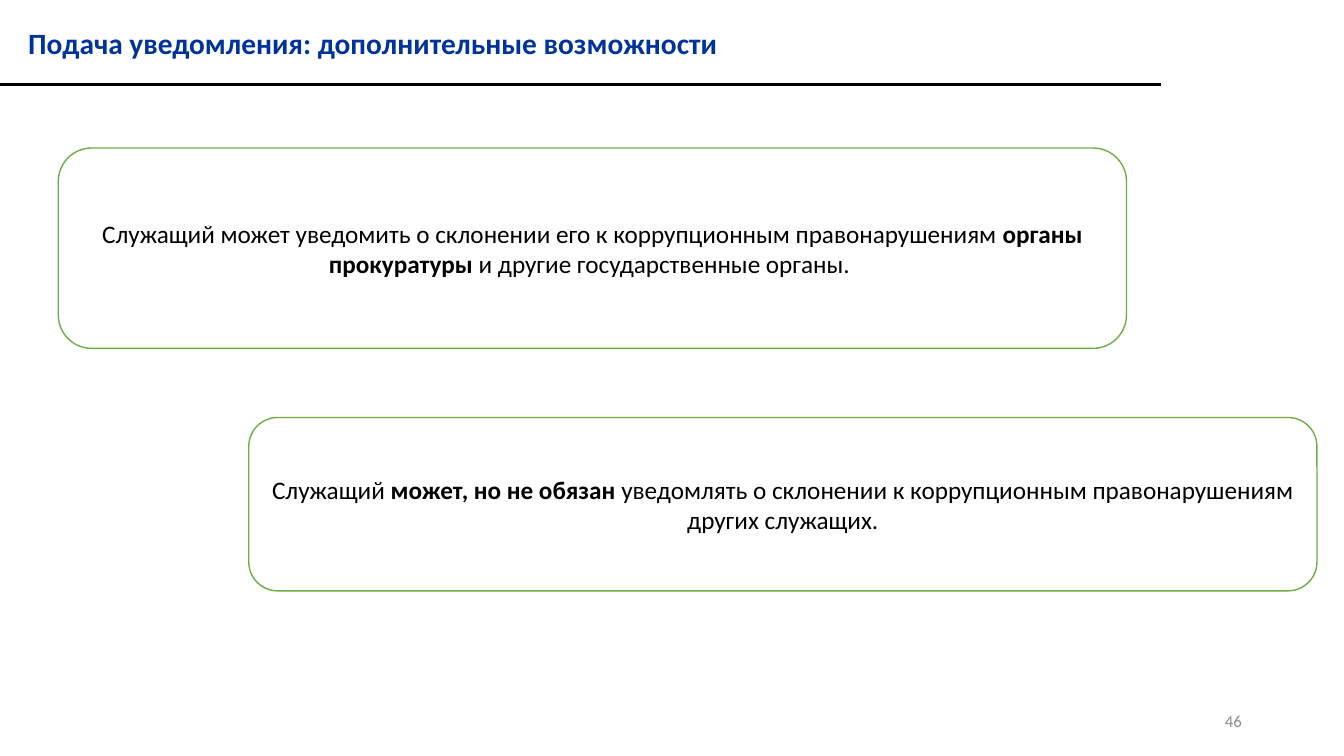
from dataclasses import dataclass

from lxml.etree import SubElement
from pptx import Presentation
from pptx.dml.color import RGBColor as RGB
from pptx.enum.shapes import MSO_CONNECTOR as Connector, MSO_SHAPE as Shape
from pptx.enum.text import MSO_ANCHOR as Anchor, PP_ALIGN as Align
from pptx.oxml.ns import qn
from pptx.util import Cm, Pt


@dataclass(frozen=True)
class Theme:
    font: str = "Calibri"
    title_color: RGB = RGB(0x00, 0x33, 0x99)
    text_color: RGB = RGB(0x00, 0x00, 0x00)
    number_color: RGB = RGB(0x8C, 0x8C, 0x8C)
    card_fill: RGB = RGB(0xFF, 0xFF, 0xFF)
    card_line: RGB = RGB(0x70, 0xAD, 0x47)
    title_size: Pt = Pt(21)
    body_size: Pt = Pt(18)
    number_size: Pt = Pt(12)


@dataclass(frozen=True)
class Box:
    """A rectangle in centimetres."""
    left: float
    top: float
    width: float
    height: float

    def lengths(self):
        return Cm(self.left), Cm(self.top), Cm(self.width), Cm(self.height)


THEME = Theme()
CARD_WIDTH = 26.92
CARDS = [
    (Box(1.47, 3.73, CARD_WIDTH, 5.05), [
        ("Служащий может уведомить о склонении его к коррупционным правонарушениям ", False),
        ("органы прокуратуры ", True),
        ("и другие государственные органы. ", False),
    ]),
    (Box(6.27, 10.52, CARD_WIDTH, 4.37), [
        ("Служащий ", False),
        ("может, но не обязан ", True),
        ("уведомлять о склонении к коррупционным правонарушениям других служащих.", False),
    ]),
]


def add_run(paragraph, text, size, color, bold=False):
    run = paragraph.add_run()
    run.text = text
    font = run.font
    font.name, font.size, font.bold = THEME.font, size, bold
    font.color.rgb = color


def add_header(slide, box, title):
    """Place the title in the box and a rule along its lower edge."""
    title_box = slide.shapes.add_textbox(
        Cm(box.left + 0.46), Cm(box.top + 0.51), Cm(18.03), Cm(1.14))
    title_box.text_frame.word_wrap = False
    add_run(title_box.text_frame.paragraphs[0], title,
            THEME.title_size, THEME.title_color, bold=True)

    bottom = Cm(box.top + box.height)
    rule = slide.shapes.add_connector(
        Connector.STRAIGHT, Cm(box.left), bottom, Cm(box.left + box.width), bottom)
    rule.line.color.rgb = THEME.text_color
    rule.line.width = Pt(1.5)
    SubElement(rule.element.spPr, qn("a:effectLst"))


def add_card(slide, box, runs):
    card = slide.shapes.add_shape(Shape.ROUNDED_RECTANGLE, *box.lengths())
    card.shadow.inherit = False
    card.fill.solid()
    card.fill.fore_color.rgb = THEME.card_fill
    card.line.color.rgb = THEME.card_line
    card.line.width = Pt(1)
    frame = card.text_frame
    frame.word_wrap = True
    frame.vertical_anchor = Anchor.MIDDLE
    paragraph = frame.paragraphs[0]
    paragraph.alignment = Align.CENTER
    paragraph.space_after = Pt(12)
    for text, bold in runs:
        add_run(paragraph, text, THEME.body_size, THEME.text_color, bold)


def add_page_number(slide, box, number):
    number_box = slide.shapes.add_textbox(*box.lengths())
    frame = number_box.text_frame
    frame.word_wrap = True
    frame.vertical_anchor = Anchor.MIDDLE
    paragraph = frame.paragraphs[0]
    paragraph.alignment = Align.RIGHT
    add_run(paragraph, number, THEME.number_size, THEME.number_color)


def main():
    presentation = Presentation()
    presentation.slide_width, presentation.slide_height = Cm(33.87), Cm(19.05)
    slide = presentation.slides.add_slide(presentation.slide_layouts[6])
    add_page_number(slide, Box(23.93, 17.65, 7.62, 1.02), "46")
    for box, runs in CARDS:
        add_card(slide, box, runs)
    add_header(slide, Box(0, 0, 29.26, 2.13),
               "Подача уведомления: дополнительные возможности")
    presentation.save("out.pptx")


if __name__ == "__main__":
    main()
